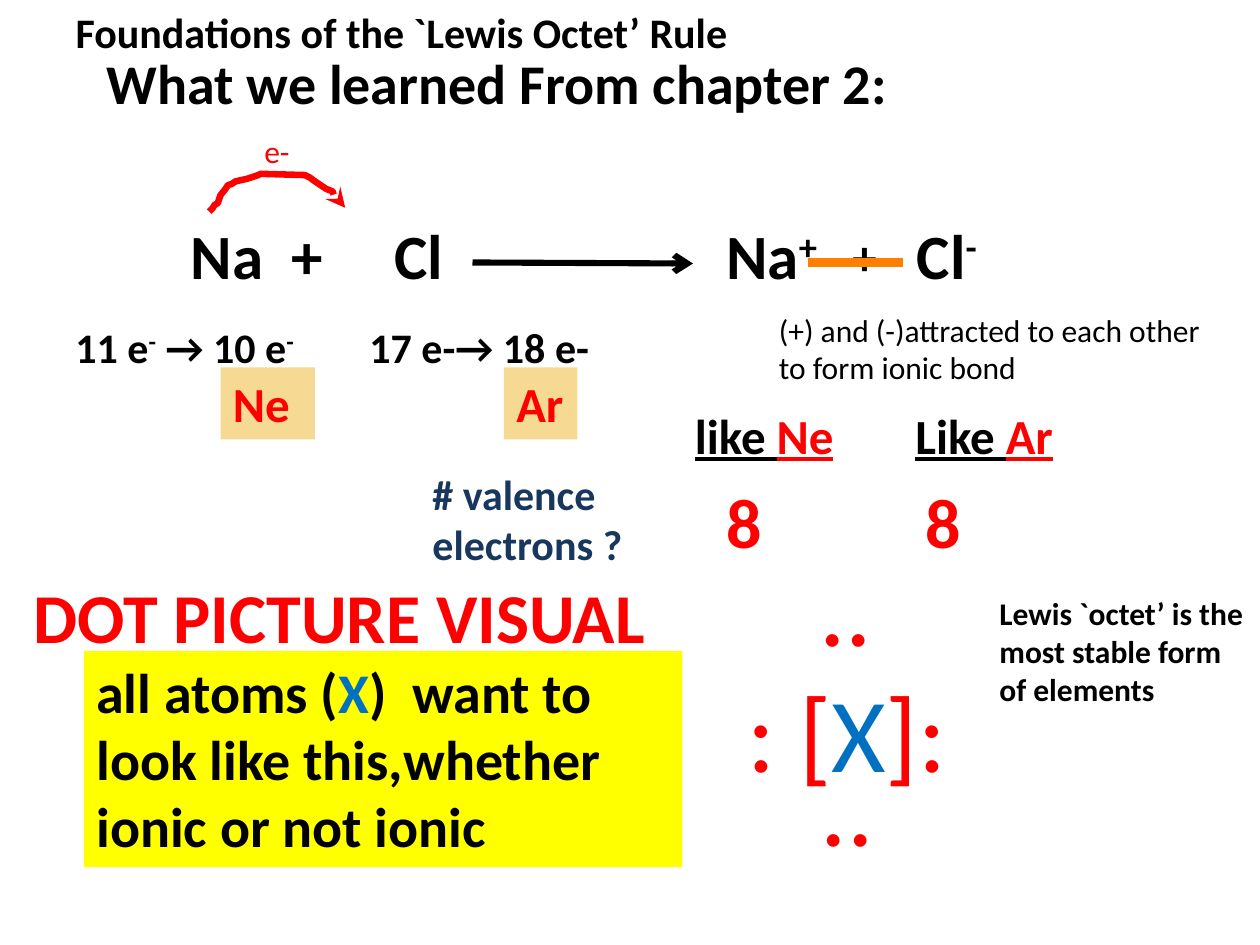
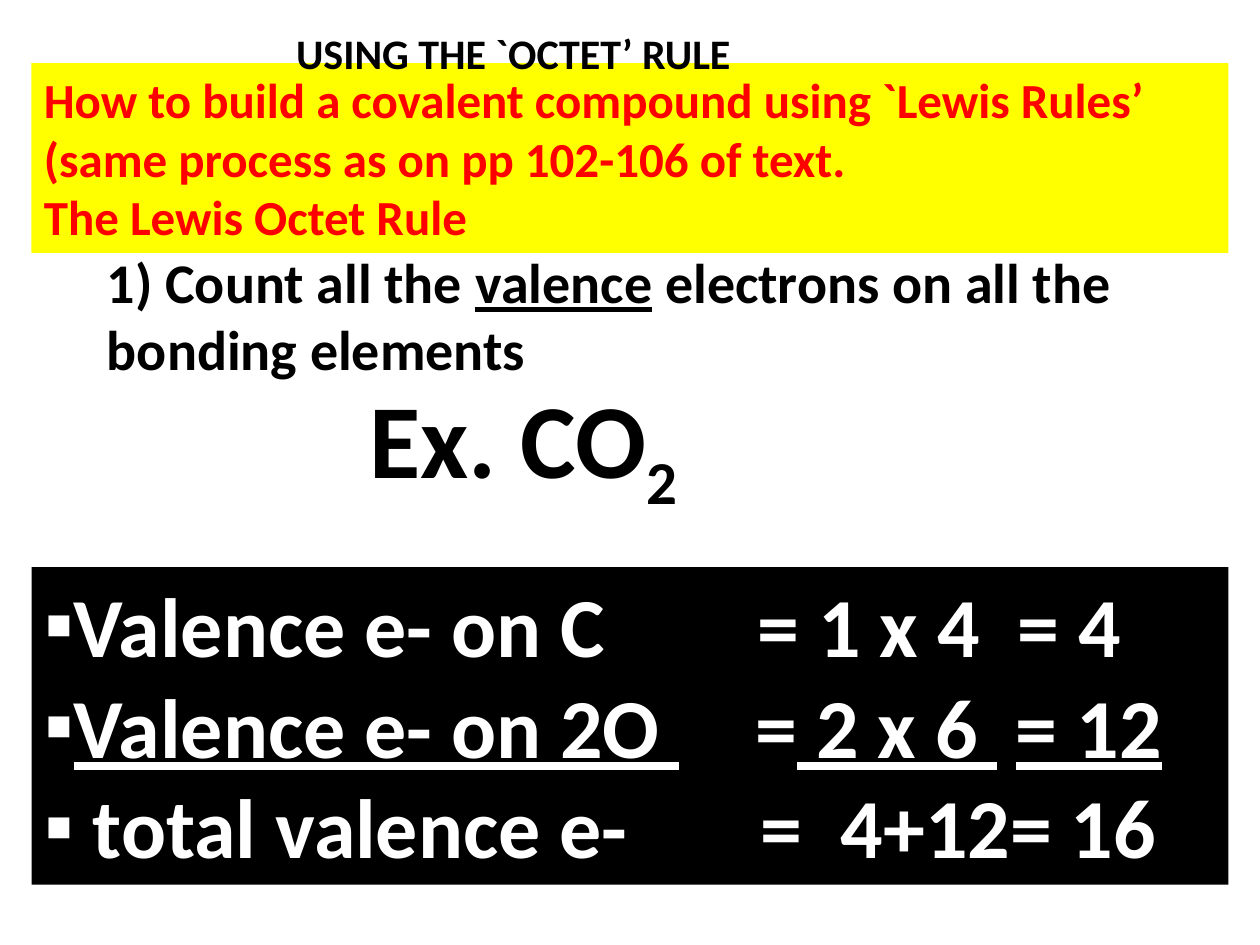
"""Build two slides on the Lewis octet rule."""
from dataclasses import dataclass

from lxml.etree import SubElement as Sub
from pptx import Presentation
from pptx.dml.color import RGBColor as Rgb
from pptx.enum.shapes import MSO_CONNECTOR as Link, MSO_SHAPE as Form
from pptx.enum.text import MSO_ANCHOR as Anchor, MSO_AUTO_SIZE as Fit, PP_ALIGN as Align
from pptx.oxml.ns import qn
from pptx.util import Inches, Pt

WIDE, HIGH = Inches(10), Inches(7.5)
COLS, ROWS = 120, 90
BLANK = 22.6


@dataclass(frozen=True)
class Theme:
    font: str = "Calibri"
    ink: str = "000000"
    red: str = "FF0000"
    blue: str = "0070C0"
    navy: str = "17375E"
    paper: str = "FFFFFF"
    yellow: str = "FFFF00"
    sand: str = "F6DA94"
    orange: str = "FF7F00"
    note: int = 18
    head: int = 24
    label: int = 28
    lead: int = 32
    atom: int = 36
    big: int = 40
    sum: int = 48
    huge: int = 60


T = Theme()


@dataclass(frozen=True)
class Span:
    text: str
    color: str = ""
    rise: int = 0
    under: bool = False
    gap: int = 1


@dataclass(frozen=True)
class Row:
    spans: tuple[Span, ...]
    indent: float = 0
    mark: str = ""


@dataclass(frozen=True)
class Box:
    x: float
    y: float
    w: float
    h: float
    rows: tuple[Row, ...]
    size: int
    color: str = T.ink
    bold: bool = True
    fill: str = ""


def across(n: float) -> int:
    return round(WIDE * n / COLS)


def down(n: float) -> int:
    return round(HIGH * n / ROWS)


def plain(*texts: str) -> tuple[Row, ...]:
    return tuple(Row((Span(text),)) for text in texts)


def mixed(*spans: Span, mark: str = "") -> Row:
    return Row(spans, mark=mark)


def space(n: int, under: bool = False) -> Span:
    return Span(" ", under=under, gap=n)


def set_row(para, row: Row, box: Box) -> None:
    para.alignment = Align.LEFT
    para.space_before = Pt(0)
    props = para._p.get_or_add_pPr()
    props.set("marL", str(Inches(row.indent)))
    props.set("indent", "0")
    if row.mark:
        Sub(props, qn("a:buFont"), typeface="Arial")
        Sub(props, qn("a:buChar"), char=row.mark)
    for span in row.spans:
        run = para.add_run()
        run.text = span.text
        font = run.font
        font.name, font.size, font.bold = T.font, Pt(box.size), box.bold
        font.underline = span.under
        font.color.rgb = Rgb.from_string(span.color or box.color)
        look = run._r.get_or_add_rPr()
        if span.rise:
            look.set("baseline", str(span.rise * 1000))
        if span.gap > 1:
            look.set("spc", str(round((span.gap - 1) * BLANK * box.size)))


def fill_box(shape, box: Box) -> None:
    shape.left, shape.top = across(box.x), down(box.y)
    shape.width, shape.height = across(box.w), down(box.h)
    if box.fill:
        shape.fill.solid()
        shape.fill.fore_color.rgb = Rgb.from_string(box.fill)
    frame = shape.text_frame
    frame.word_wrap, frame.auto_size = True, Fit.NONE
    frame.vertical_anchor = Anchor.TOP
    for i, row in enumerate(box.rows):
        set_row(frame.add_paragraph() if i else frame.paragraphs[0], row, box)


def draw(slide, box: Box) -> None:
    place = across(box.x), down(box.y), across(box.w), down(box.h)
    if box.fill:
        shape = slide.shapes.add_shape(Form.RECTANGLE, *place)
        shape.shadow.inherit = False
        shape.line.fill.background()
    else:
        shape = slide.shapes.add_textbox(*place)
    fill_box(shape, box)


def ink_line(shape, color: str, width: float, tip: str = "") -> None:
    shape.line.color.rgb = Rgb.from_string(color)
    shape.line.width = Pt(width)
    if tip:
        Sub(shape.line._get_or_add_ln(), qn("a:tailEnd"), type=tip)


def link(slide, x1: float, y1: float, x2: float, y2: float,
         color: str, width: float, tip: str = "") -> None:
    line = slide.shapes.add_connector(
        Link.STRAIGHT, across(x1), down(y1), across(x2), down(y2))
    ink_line(line, color, width, tip)
    Sub(line._element.spPr, qn("a:effectLst"))


def curve(slide, points: tuple[tuple[int, int], ...]) -> None:
    start, *rest = points
    pen = slide.shapes.build_freeform(*start, scale=Inches(1) / 100)
    pen.add_line_segments(rest, close=False)
    shape = pen.convert_to_shape()
    shape.fill.background()
    shape.shadow.inherit = False
    ink_line(shape, T.red, 3.75, "stealth")


def set_title(slide, box: Box) -> None:
    title = slide.shapes.title
    fill_box(title, box)
    slide.shapes._spTree.append(title._element)


JUMP = (
    (166, 168), (169, 165), (170, 163), (173, 161), (175, 155),
    (179, 150), (181, 147), (184, 146), (187, 144), (196, 142),
    (205, 139), (207, 138), (242, 139), (246, 141), (250, 144),
    (256, 148), (259, 150), (264, 152), (265, 155), (268, 157),
    (270, 160), (273, 165), (274, 165),
)


def ions(slide) -> None:
    set_title(slide, Box(6, 0, 109, 6, plain("Foundations of the `Lewis Octet’ Rule"), T.head))
    atoms = mixed(Span("Na"), space(2), Span("+"), space(5), Span("Cl"))
    draw(slide, Box(17, 20, 40, 8.5, (atoms,), T.atom))
    curve(slide, JUMP)
    draw(slide, Box(24, 12, 12, 4.8, plain("e-"), T.note, T.red, False))
    link(slide, 45, 25, 66, 25.1, T.ink, 3.5, "arrow")
    pair = mixed(Span("Na"), Span("+", rise=30), space(7), Span("Cl"), Span("-", rise=30))
    draw(slide, Box(68, 20, 34, 8.5, (pair,), T.atom))
    draw(slide, Box(73, 29, 43, 8.5, plain("(+) and (-)attracted to each other to form ionic bond"),
                    T.note, bold=False))
    draw(slide, Box(80, 21, 6, 6.8, plain("+"), T.label))
    link(slide, 77, 25, 86, 25, T.orange, 5)

    loss = mixed(Span("11 e"), Span("-", rise=30), Span(" → 10 e"), Span("-", rise=30))
    draw(slide, Box(6, 30, 26, 6, (loss,), T.head))
    draw(slide, Box(34, 30, 26, 6, plain("17 e-→ 18 e-"), T.head))
    for x, w, gas, like_x, like, eight_x in (
            (21, 9, "Ne", 65, "like ", 68), (48, 7, "Ar", 86, "Like ", 87)):
        draw(slide, Box(x, 35, w, 6.86, plain(gas), T.label, T.red, fill=T.sand))
        same = mixed(Span(like, under=True), Span(gas, T.red, under=True))
        draw(slide, Box(like_x, 38, 18, 6.86, (same,), T.label))
        draw(slide, Box(eight_x, 45, 11, 9.2, plain("8"), T.big, T.red))

    draw(slide, Box(9, 4, 95, 7.7, plain("What we learned From chapter 2:"), T.lead))
    draw(slide, Box(40, 44, 21, 10.9, plain("# valence electrons ?"), T.head, T.navy))
    dots = (Row((Span(".."),), indent=0.57), mixed(Span(": ["), Span("X", T.blue), Span("]:")))
    draw(slide, Box(70, 51, 34, 35.2, dots, T.huge, T.red, False))
    draw(slide, Box(77, 70, 8, 13.3, plain(".."), T.huge, T.red, False))
    wish = mixed(Span("all atoms ("), Span("X", T.blue), Span(")"), space(2),
                 Span("want to look like this,whether ionic or not ionic"))
    draw(slide, Box(8, 62, 57, 20.6, (wish,), T.lead, fill=T.yellow))
    draw(slide, Box(2, 54, 61, 9.2, plain("DOT PICTURE VISUAL"), T.big, T.red))
    draw(slide, Box(94, 56, 26, 12.1,
                    plain("Lewis `octet’ is the most stable form of elements"), T.note))


def octet(slide) -> None:
    draw(slide, Box(3, 6, 114, 18.1, plain(
        "How to build a covalent compound using `Lewis Rules’",
        "(same process as on pp 102-106 of text.",
        "The Lewis Octet Rule"), T.label, T.red, fill=T.yellow))
    count = mixed(Span("1) Count all the "), Span("valence", under=True),
                  Span(" electrons on all the bonding elements"))
    draw(slide, Box(9, 23, 107, 14.2, (count,), T.lead))
    draw(slide, Box(34, 35, 45, 13.3, (mixed(Span("Ex. CO"), Span("2", rise=-25)),), T.huge))
    mark = "▪"
    sums = (
        mixed(Span("Valence e- on C"), space(8), Span("= 1 x 4"), space(2),
              Span("= 4"), mark=mark),
        mixed(Span("Valence e- on 2O", under=True), space(5, True), Span("="),
              Span(" 2 x 6", under=True), space(2, True), Span("= 12", under=True), mark=mark),
        mixed(Span(" total valence e-"), space(7), Span("="), space(2),
              Span("4+12= 16"), mark=mark),
    )
    fill_box(slide.placeholders[1], Box(3, 54, 114, 30.25, sums, T.sum, T.paper, fill=T.ink))
    set_title(slide, Box(27, 2, 54, 6, plain("USING THE `OCTET’ RULE"), T.head))


def main() -> None:
    deck = Presentation()
    deck.slide_width, deck.slide_height = WIDE, HIGH
    for plan, make in ((5, ions), (1, octet)):
        make(deck.slides.add_slide(deck.slide_layouts[plan]))
    deck.save("out.pptx")


if __name__ == "__main__":
    main()
